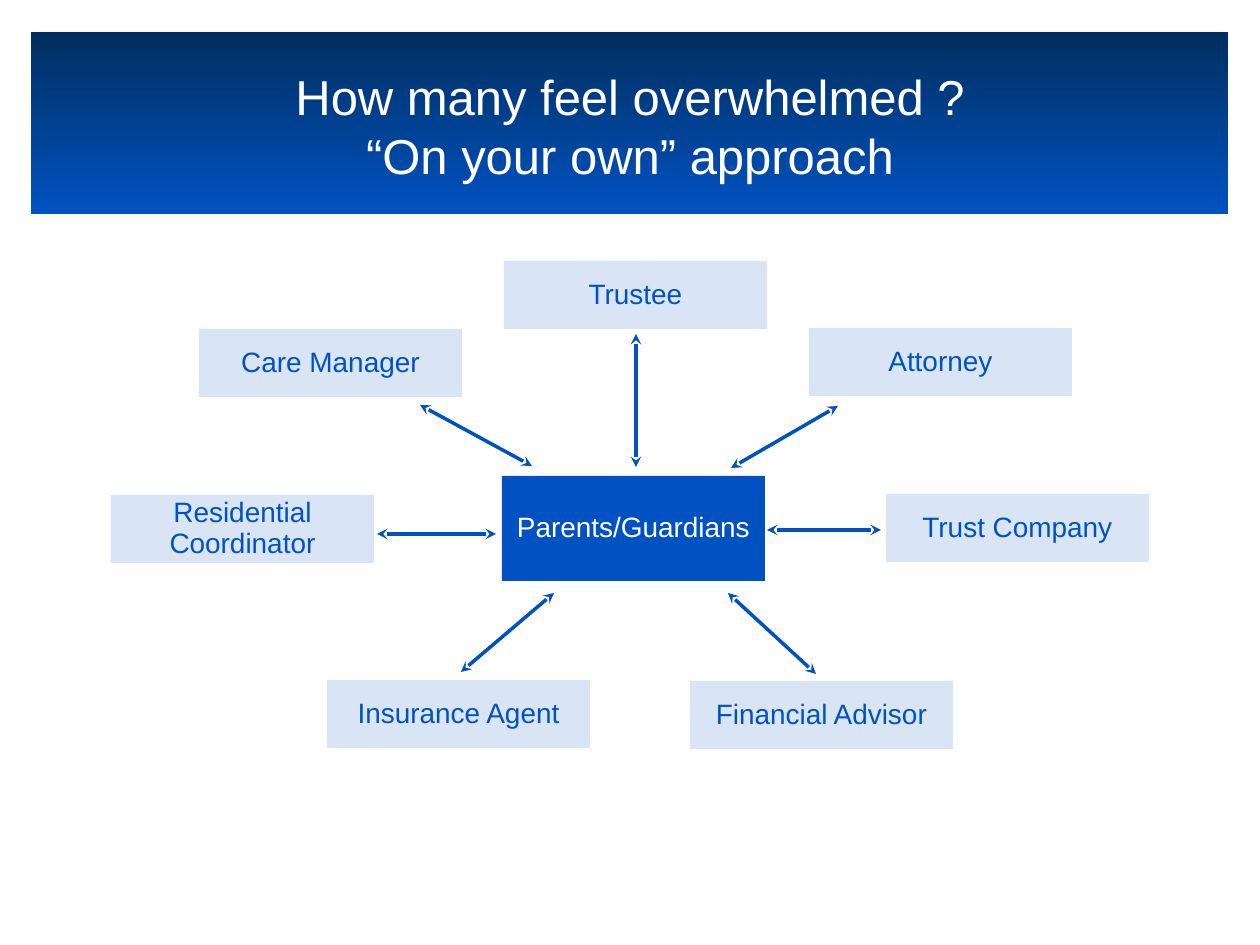
from lxml import etree
from pptx import Presentation
from pptx.dml.color import RGBColor
from pptx.enum.shapes import MSO_CONNECTOR, MSO_SHAPE
from pptx.enum.text import MSO_ANCHOR, PP_ALIGN
from pptx.oxml.ns import qn
from pptx.util import Pt

RECT, STRAIGHT = MSO_SHAPE.RECTANGLE, MSO_CONNECTOR.STRAIGHT
MIDDLE, CENTER = MSO_ANCHOR.MIDDLE, PP_ALIGN.CENTER
PX = 914400 // 126

# Content, in px
TITLE = "How many feel overwhelmed ?\n“On your own” approach"
BANNER = (31, 32, 1197, 182)
TITLE_BOX = (63, 63, 1134, 139)
TITLE_LIFT = 14
HUB = ("Parents/Guardians", (502, 476, 263, 105))
ROLE_W, ROLE_H = 263, 68
# role, left, top, arrow start, arrow end
ROLES = [
    ("Trustee", 504, 261, (636, 334), (636, 467)),
    ("Attorney", 809, 328, (731, 468), (838, 406)),
    ("Trust Company", 886, 494, (767, 530), (881, 530)),
    ("Financial Advisor", 690, 681, (728, 593), (816, 674)),
    ("Insurance Agent", 327, 680, (554, 593), (461, 672)),
    ("Residential\nCoordinator", 111, 495, (496, 534), (377, 534)),
    ("Care Manager", 199, 329, (420, 405), (532, 466)),
]
THEME = {
    "blue": RGBColor.from_string("0052C2"),
    "navy": RGBColor.from_string("002F5F"),
    "white": RGBColor.from_string("FFFFFF"),
    "font": "Arial",
    "title": Pt(28),
    "label": Pt(16),
    "line": Pt(2),
    "tint": 15,
}


def emu(lengths):
    return [v * PX for v in lengths]


def write(tf, text, size, color, spacing=None):
    tf.vertical_anchor = MIDDLE
    p = tf.paragraphs[0]
    p.text = text
    p.alignment = CENTER
    if spacing:
        p.line_spacing = spacing
    for r in p.runs:
        r.font.name = THEME["font"]
        r.font.size = size
        r.font.color.rgb = color


def set_margins(tf, margin):
    tf.margin_left = tf.margin_top = tf.margin_right = tf.margin_bottom = margin


def add_rect(slide, box):
    sp = slide.shapes.add_shape(RECT, *emu(box))
    sp.shadow.inherit = False
    sp.line.fill.background()
    return sp


def add_label(slide, text, box, color, alpha=None):
    sp = add_rect(slide, box)
    sp.fill.solid()
    sp.fill.fore_color.rgb = THEME["blue"]
    if alpha:
        clr = sp._element.spPr.find(qn("a:solidFill"))[0]
        etree.SubElement(clr, qn("a:alpha"), val=str(alpha * 1000))
    tf = sp.text_frame
    tf.word_wrap = False
    set_margins(tf, 6 * PX)
    write(tf, text, THEME["label"], color, 0.9)


def add_arrow(slide, start, end):
    cxn = slide.shapes.add_connector(STRAIGHT, *emu(start + end))
    cxn.line.color.rgb = THEME["blue"]
    cxn.line.width = THEME["line"]
    ln = cxn.line._get_or_add_ln()
    for tag in ("a:headEnd", "a:tailEnd"):
        etree.SubElement(ln, qn(tag), type="stealth")
    etree.SubElement(cxn._element.spPr, qn("a:effectLst"))


def add_title(slide):
    banner = add_rect(slide, BANNER)
    banner.fill.gradient()
    banner.fill.gradient_angle = 90
    for stop, name in zip(banner.fill.gradient_stops, ("blue", "navy")):
        stop.color.rgb = THEME[name]
    tf = slide.shapes.add_textbox(*emu(TITLE_BOX)).text_frame
    tf.word_wrap = True
    set_margins(tf, 0)
    tf.margin_bottom = TITLE_LIFT * PX
    write(tf, TITLE, THEME["title"], THEME["white"])


def main():
    prs = Presentation()
    prs.slide_width, prs.slide_height = emu((1260, 945))
    slide = prs.slides.add_slide(prs.slide_layouts[6])
    add_title(slide)

    # Hub, roles around it and the arrows between them
    add_label(slide, *HUB, THEME["white"])
    for role, left, top, start, end in ROLES:
        box = (left, top, ROLE_W, ROLE_H)
        add_label(slide, role, box, THEME["blue"], THEME["tint"])
        add_arrow(slide, start, end)

    prs.save("out.pptx")


if __name__ == "__main__":
    main()
